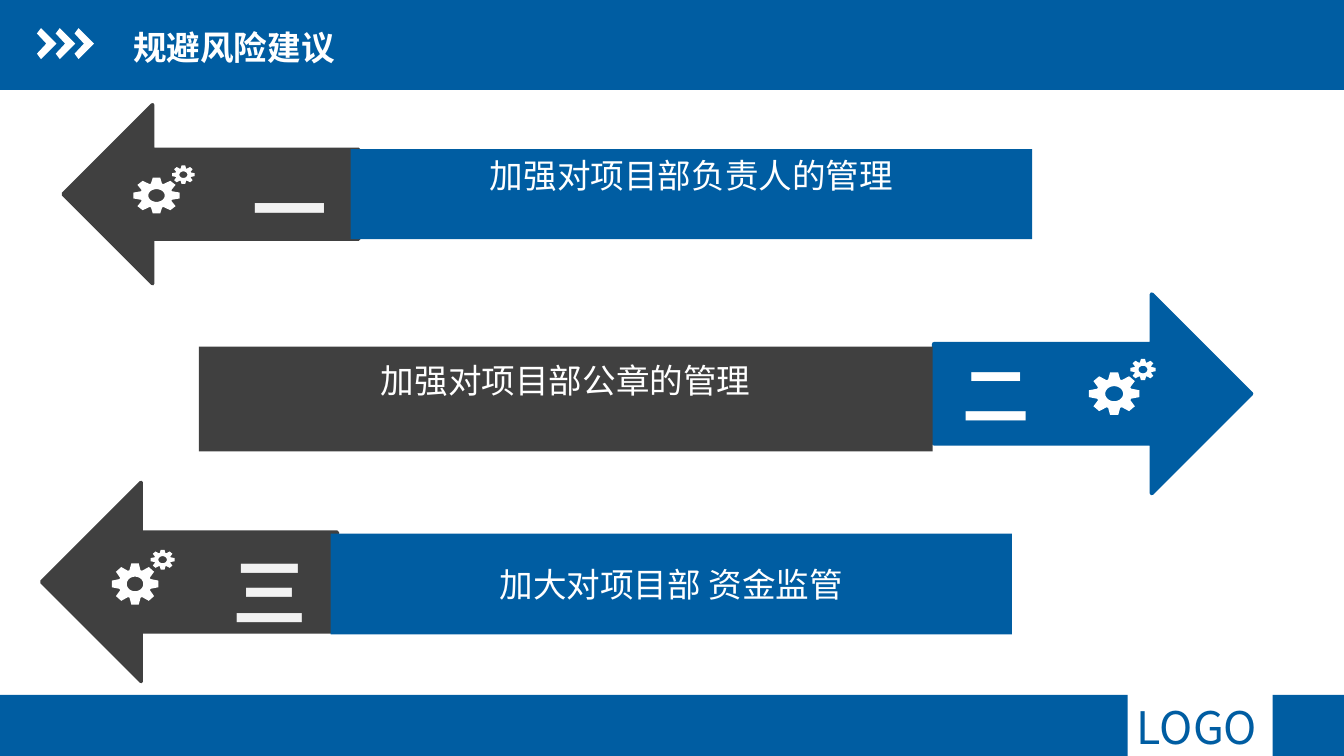
"""Builds the slide of three arrow banners with advice on avoiding risk."""
from math import cos, pi, sin

from pptx import Presentation
from pptx.dml.color import RGBColor
from pptx.enum.shapes import MSO_SHAPE
from pptx.enum.text import MSO_ANCHOR, PP_ALIGN
from pptx.util import Inches, Pt

RECT, OVAL, ARROW = MSO_SHAPE.RECTANGLE, MSO_SHAPE.OVAL, MSO_SHAPE.RIGHT_ARROW
TOP, MIDDLE = MSO_ANCHOR.TOP, MSO_ANCHOR.MIDDLE
LEFT, CENTER = PP_ALIGN.LEFT, PP_ALIGN.CENTER

THEME = {
    "blue": RGBColor.from_string("005DA2"),
    "dark": RGBColor.from_string("404040"),
    "white": RGBColor.from_string("FFFFFF"),
    "pale": RGBColor.from_string("F2F2F2"),
    "font": "Arial", "logo_font": "Noto Sans CJK SC",
    "body": 18, "logo": 24, "mid": 36, "big": 40,
}
CELL = Inches(0.1)
COLS, ROWS = 100, 56.25

deck = Presentation()
deck.slide_width, deck.slide_height = int(COLS * CELL), int(ROWS * CELL)
slide = deck.slides.add_slide(deck.slide_layouts[6])
shapes = slide.shapes


def paint(kind, box, fill, line=0):
    item = shapes.add_shape(kind, *(int(n * CELL) for n in box))
    item.shadow.inherit = False
    item.fill.solid()
    item.fill.fore_color.rgb = THEME[fill]
    if line:
        item.line.color.rgb = THEME[fill]
        item.line.width = Pt(line)
    else:
        item.line.fill.background()
    return item


def write(text, box=None, shape=None, size="body", color="white", font="font",
          bold=False, align=LEFT, anchor=TOP, inset=(1, 0.5, 1, 0.5)):
    if shape is None:
        shape = shapes.add_textbox(*(int(n * CELL) for n in box))
    frame = shape.text_frame
    frame.word_wrap = False
    frame.vertical_anchor = anchor
    (frame.margin_left, frame.margin_top,
     frame.margin_right, frame.margin_bottom) = (int(n * CELL) for n in inset)
    para = frame.paragraphs[0]
    para.alignment = align
    run = para.add_run()
    run.text = text
    run.font.name = THEME[font]
    run.font.size = Pt(THEME[size])
    run.font.bold = bold
    run.font.color.rgb = THEME[color]


FOOT = 51.7
paint(RECT, (0, 0, COLS, 6.7), "blue")
paint(RECT, (0, FOOT, 83.9, ROWS - FOOT), "blue")
paint(RECT, (94.7, FOOT, COLS - 94.7, ROWS - FOOT), "blue")
write("LOGO", (83.6, 51.6, 11.6, 5), size="logo", color="blue", font="logo_font")
write("规避风险建议", (9.4, 1.4, 23.3, 4.2), bold=True, anchor=MIDDLE,
      inset=(0.5, 0.5, 0, 0.5))

CHEVRON = [(0, 0.4), (0.3, 0), (1.45, 1.15), (0.3, 2.3), (0, 1.9), (0.7, 1.15)]
outlines = []
for step in range(3):
    left = 2.75 + 1.4 * step
    outlines.append([[(left + x, 2.1 + y) for x, y in CHEVRON]])

BANNERS = [
    dict(arrow=(4.7, 7.8, 22, 13.3), turn=180, line=2, tone="dark",
         bar=(26.1, 11.1, 50.7, 6.7), fill="blue", lift=2.9,
         text="加强对项目部负责人的管理", mark="一", spot=(17.8, 11.6, 7.6, 5.4),
         gears=[(12.8, 12.3, 1.7, 1.4), (9.9, 13.2, 3.5, 2.7)]),
    dict(arrow=(69.5, 21.9, 23.6, 14.8), turn=0, line=2.25, tone="blue",
         bar=(14.8, 25.8, 54.6, 7.8), fill="dark", lift=2.9,
         text="加强对项目部公章的管理", mark="二", spot=(70, 25.6, 8.3, 7.4),
         gears=[(84.1, 26.7, 1.9, 1.6), (81, 27.7, 3.8, 3.2)]),
    dict(arrow=(3.1, 35.9, 22, 14.8), turn=180, line=2, tone="dark",
         bar=(24.6, 39.7, 50.7, 7.5), fill="blue", lift=0,
         text="加大对项目部 资金监管", mark="三", spot=(16.3, 40.1, 7.6, 7.7),
         gears=[(11.2, 40.9, 1.8, 1.5), (8.3, 41.9, 3.5, 3.1)]),
]
for row in BANNERS:
    arrow = paint(ARROW, row["arrow"], row["tone"], row["line"])
    arrow.rotation = row["turn"]
    bar = paint(RECT, row["bar"], row["fill"])
    write(row["text"], shape=bar, align=CENTER, anchor=MIDDLE,
          inset=(1.6, 0, 1.6, row["lift"]))
    if row["turn"]:
        write(row["mark"], row["spot"], size="big", color="pale", bold=True)
    else:
        disc = paint(OVAL, row["spot"], row["tone"])
        write(row["mark"], shape=disc, size="mid", bold=True,
              align=CENTER, anchor=MIDDLE)
    for left, top, wide, high in row["gears"]:
        teeth = [(r, tooth * pi / 4 + turn) for tooth in range(8)
                 for r, turn in ((1, -0.16), (1, 0.16), (0.7, 0.34), (0.7, 0.44))]
        hole = [(0.35, -n * pi / 16) for n in range(32)]
        outlines.append([[(left + wide / 2 * (1 + r * cos(a)),
                           top + high / 2 * (1 + r * sin(a))) for r, a in ring]
                         for ring in (teeth, hole)])

for rings in outlines:
    first, *rest = [[(int(x * CELL), int(y * CELL)) for x, y in ring]
                    for ring in rings]
    pen = shapes.build_freeform(*first[0])
    pen.add_line_segments(first[1:], close=True)
    for ring in rest:
        pen.move_to(*ring[0])
        pen.add_line_segments(ring[1:], close=True)
    icon = pen.convert_to_shape()
    icon.shadow.inherit = False
    icon.fill.solid()
    icon.fill.fore_color.rgb = THEME["white"]
    icon.line.fill.background()

deck.save("out.pptx")
